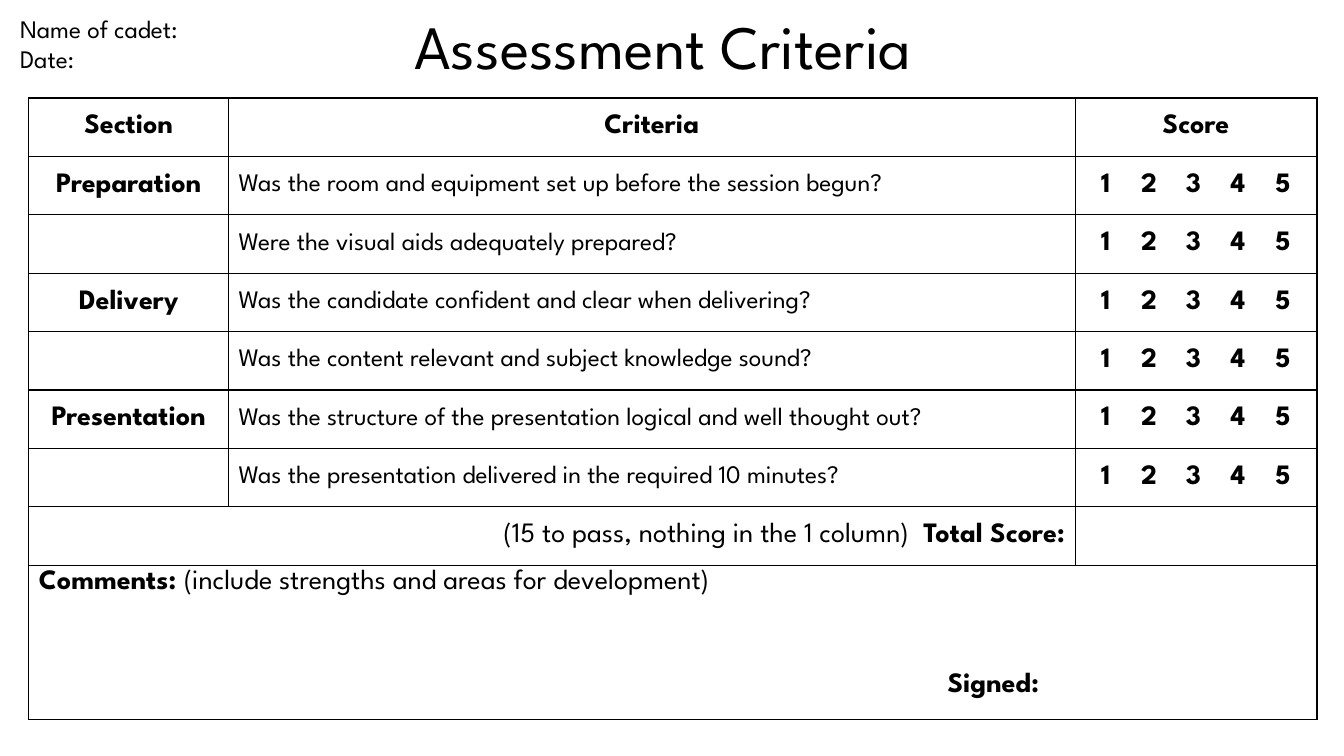
from lxml import etree
from pptx import Presentation
from pptx.dml.color import RGBColor
from pptx.enum import text as t
from pptx.oxml.ns import qn
from pptx.util import Pt

FONT = "League Spartan"
INK = "000000"
LEFT, MID, RIGHT = t.PP_ALIGN.LEFT, t.PP_ALIGN.CENTER, t.PP_ALIGN.RIGHT
COLS = [142.6, 604.8, 172.8]
ROW, LAST = 41.75, 99.5
ITEMS = [
    ("Preparation", "Was the room and equipment set up before the session begun?"),
    ("", "Were the visual aids adequately prepared?"),
    ("Delivery", "Was the candidate confident and clear when delivering?"),
    ("", "Was the content relevant and subject knowledge sound?"),
    ("Presentation", "Was the structure of the presentation logical and well thought out?"),
    ("", "Was the presentation delivered in the required 10 minutes?"),
]


def color(code):
    return RGBColor.from_string(code)


def style(para, size, align=LEFT, bold=None):
    para.alignment = align
    font = para.font
    font.name, font.size, font.bold = FONT, Pt(size), bold
    font.color.rgb = color(INK)


def add_text(slide, box, lines, size, align=LEFT, anchor=t.MSO_ANCHOR.TOP):
    frame = slide.shapes.add_textbox(*map(Pt, box)).text_frame
    frame.word_wrap = True
    frame.vertical_anchor = anchor
    frame.text = "\n".join(lines)
    for para in frame.paragraphs:
        style(para, size, align)
    return frame


def add_runs(para, parts):
    """Add (wording, bold) parts to one paragraph."""
    for words, bold in parts:
        run = para.add_run()
        run.text = words
        run.font.bold = bold


def fill_cell(cell, words, size=20, align=MID, bold=True):
    cell.text = words
    style(cell.text_frame.paragraphs[0], size, align, bold)


def set_tabs(para, stops):
    tabs = etree.SubElement(para._p.get_or_add_pPr(), qn("a:tabLst"))
    for stop in stops:
        etree.SubElement(tabs, qn("a:tab"), pos=str(Pt(stop)), algn="l")
    # The schema wants the tab list ahead of the default font.
    font = para._p.pPr.find(qn("a:defRPr"))
    if font is not None:
        tabs.addnext(font)


def add_scale(cell):
    """Write the scores 1 to 5 at equal tab stops."""
    fill_cell(cell, "\t".join("12345"), align=LEFT)
    cell.margin_left = Pt(18.6)
    set_tabs(cell.text_frame.paragraphs[0], [28.5 + 32 * i for i in range(4)])


def frame_cell(cell):
    cell.fill.background()
    props = cell._tc.get_or_add_tcPr()
    for i, side in enumerate(("lnL", "lnR", "lnT", "lnB")):
        line = etree.Element(qn("a:" + side), w=str(Pt(1)))
        fill = etree.SubElement(line, qn("a:solidFill"))
        etree.SubElement(fill, qn("a:srgbClr"), val=INK)
        props.insert(i, line)


def add_grid(slide):
    count = len(ITEMS) + 3
    high = ROW * (count - 1) + LAST
    grid = slide.shapes.add_table(
        count, len(COLS), Pt(20.6), Pt(70), Pt(sum(COLS)), Pt(high)).table
    grid.first_row = grid.horz_banding = False
    for col, wide in zip(grid.columns, COLS):
        col.width = Pt(wide)
    for row in grid.rows:
        row.height = Pt(ROW)
    grid.rows[count - 1].height = Pt(LAST)
    for cell in grid.iter_cells():
        frame_cell(cell)
        cell.vertical_anchor = t.MSO_ANCHOR.MIDDLE
    return grid


def fill_items(grid):
    for i, head in enumerate(("Section", "Criteria", "Score")):
        fill_cell(grid.cell(0, i), head)
    for i, (part, query) in enumerate(ITEMS, 1):
        if part:
            fill_cell(grid.cell(i, 0), part)
        fill_cell(grid.cell(i, 1), query, 18, LEFT, False)
        add_scale(grid.cell(i, 2))


def fill_total(grid, row):
    cell = grid.cell(row, 0)
    cell.merge(grid.cell(row, 1))
    para = cell.text_frame.paragraphs[0]
    style(para, 20, RIGHT)
    add_runs(para, [("(15 to pass, nothing in the 1 column)  ", False),
                    ("Total Score:", True)])


def fill_notes(grid, row):
    cell = grid.cell(row, 0)
    cell.merge(grid.cell(row, 2))
    cell.vertical_anchor = t.MSO_ANCHOR.TOP
    note = cell.text_frame.paragraphs[0]
    style(note, 20)
    add_runs(note, [("Comments: ", True),
                    ("(include strengths and areas for development)", False)])
    sign = cell.text_frame.add_paragraph()
    sign.text = "Signed:"
    style(sign, 20, LEFT, True)
    sign.space_before = Pt(55)
    sign._p.pPr.set("marL", str(Pt(649)))


def main():
    deck = Presentation()
    deck.slide_width, deck.slide_height = Pt(960), Pt(540)
    slide = deck.slides.add_slide(deck.slide_layouts[6])
    title = add_text(slide, (238.3, 5.8, 470.9, 59), ["Assessment Criteria"],
                     44, MID, t.MSO_ANCHOR.MIDDLE)
    title.paragraphs[0].line_spacing = 0.9
    grid = add_grid(slide)
    fill_items(grid)
    fill_total(grid, len(ITEMS) + 1)
    fill_notes(grid, len(ITEMS) + 2)
    add_text(slide, (7.2, 5.8, 253.4, 51.1), ["Name of cadet:", "Date:"], 18)
    deck.save("out.pptx")


if __name__ == "__main__":
    main()
